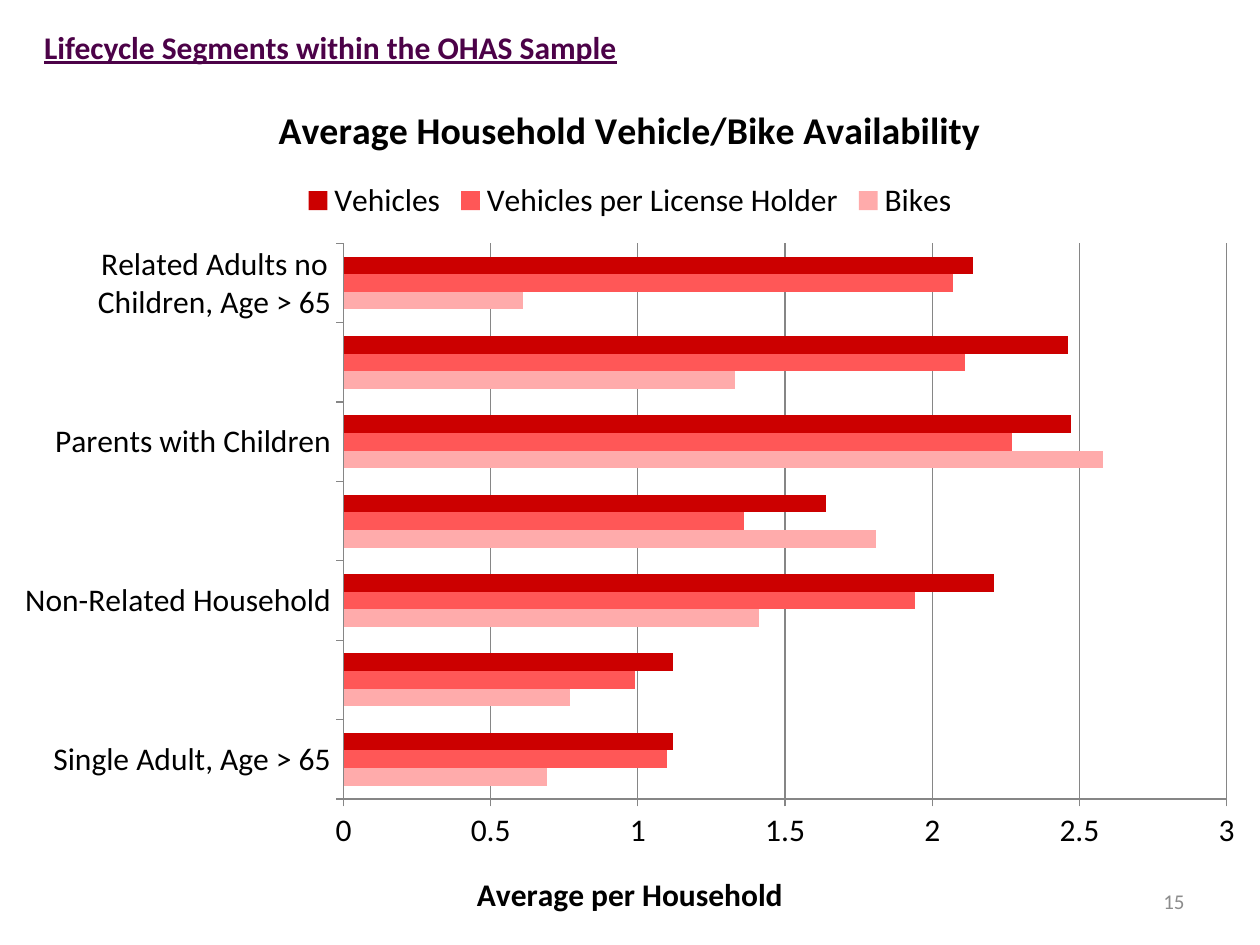
from pptx import Presentation
from pptx.chart.data import CategoryChartData
from pptx.dml.color import RGBColor
from pptx.enum.chart import XL_CHART_TYPE, XL_LEGEND_POSITION as LEGEND, XL_TICK_MARK as TICK
from pptx.enum.text import MSO_ANCHOR, MSO_AUTO_SIZE, PP_ALIGN
from pptx.util import Inches, Pt

FONT = "Calibri"
HEADING = "Lifecycle Segments within the OHAS Sample"
PAGE = "15"
CHART_TITLE = "Average Household Vehicle/Bike Availability"
AXIS_TITLE = "Average per Household"
CATEGORIES = [
    "Single Adult, Age > 65",
    "Single Adult, Age 18-65",
    "Non-Related Household",
    "Single Parents with Children",
    "Parents with Children",
    "Related Adults no Children, Age < 65",
    "Related Adults no Children, Age > 65",
]
SERIES = [
    ("Bikes", "FFABAB", (0.69, 0.77, 1.41, 1.81, 2.58, 1.33, 0.61)),
    ("Vehicles per License Holder", "FF5757", (1.1, 0.99, 1.94, 1.36, 2.27, 2.11, 2.07)),
    ("Vehicles", "CC0000", (1.12, 1.12, 2.21, 1.64, 2.47, 2.46, 2.14)),
]


def color(hex_value):
    return RGBColor.from_string(hex_value)


def style(font, size, hex_value, bold=False):
    font.name, font.size, font.bold = FONT, Pt(size), bold
    font.color.rgb = color(hex_value)


def add_run(tf, text, *look):
    r = tf.paragraphs[0].add_run()
    r.text = text
    style(r.font, *look)
    return r


prs = Presentation()
prs.slide_width, prs.slide_height = Inches(10), Inches(7.5)
s = prs.slides.add_slide(prs.slide_layouts[5])

title = s.shapes.title
title.left, title.top, title.width, title.height = map(Inches, (0.25, 0.17, 4.78, 0.4))
tf = title.text_frame
tf.word_wrap = False
tf.auto_size = MSO_AUTO_SIZE.SHAPE_TO_FIT_TEXT
tf.vertical_anchor = MSO_ANCHOR.TOP
tf.paragraphs[0].alignment = PP_ALIGN.LEFT
add_run(tf, HEADING, 18, "4C0248", True).font.underline = True

number = s.shapes.add_textbox(*map(Inches, (7.17, 6.95, 2.33, 0.4)))
tf = number.text_frame
tf.word_wrap = True
tf.vertical_anchor = MSO_ANCHOR.MIDDLE
tf.paragraphs[0].alignment = PP_ALIGN.RIGHT
add_run(tf, PAGE, 12, "8C8C8C")

data = CategoryChartData()
data.categories = CATEGORIES
for name, _, values in SERIES:
    data.add_series(name, values)
chart = s.shapes.add_chart(
    XL_CHART_TYPE.BAR_CLUSTERED, *map(Inches, (0, 0.57, 10, 6.93)), data).chart
style(chart.font, 18, "000000")
chart.has_title = True
add_run(chart.chart_title.text_frame, CHART_TITLE, 21.6, "000000", True)
chart.has_legend = True
chart.legend.position = LEGEND.TOP
chart.legend.include_in_layout = False

plot = chart.plots[0]
plot.gap_width, plot.overlap = 150, 0
plot.vary_by_categories = False
for series, (_, fill, _) in zip(plot.series, SERIES):
    series.format.fill.solid()
    series.format.fill.fore_color.rgb = color(fill)

cat_axis, val_axis = chart.category_axis, chart.value_axis
val_axis.minimum_scale, val_axis.maximum_scale, val_axis.major_unit = 0, 3, 0.5
val_axis.has_major_gridlines = True
val_axis.tick_labels.number_format = "General"
val_axis.tick_labels.number_format_is_linked = False
for axis in (cat_axis, val_axis):
    axis.major_tick_mark, axis.minor_tick_mark = TICK.OUTSIDE, TICK.NONE
for part in (cat_axis, val_axis, val_axis.major_gridlines):
    part.format.line.color.rgb = color("868686")
    part.format.line.width = Pt(0.75)
val_axis.has_title = True
add_run(val_axis.axis_title.text_frame, AXIS_TITLE, 18, "000000", True)

prs.save("out.pptx")
